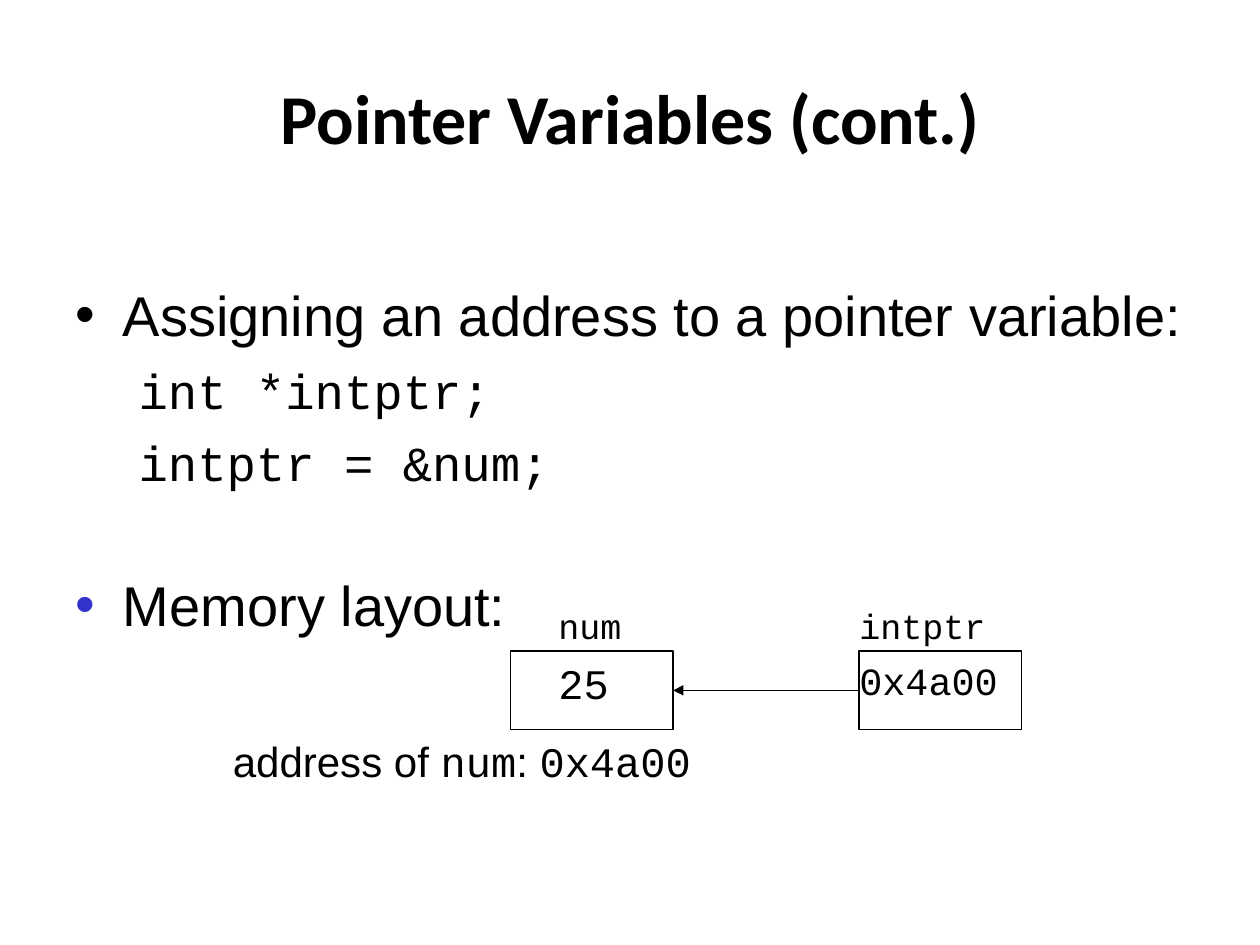
from lxml import etree
from pptx import Presentation
from pptx.dml.color import RGBColor
from pptx.enum.shapes import MSO_CONNECTOR, MSO_SHAPE
from pptx.enum.text import MSO_ANCHOR, MSO_AUTO_SIZE, PP_ALIGN
from pptx.oxml.ns import qn
from pptx.util import Pt

RECT = MSO_SHAPE.RECTANGLE
STRAIGHT = MSO_CONNECTOR.STRAIGHT
MIDDLE, TOP = MSO_ANCHOR.MIDDLE, MSO_ANCHOR.TOP
CENTER, LEFT = PP_ALIGN.CENTER, PP_ALIGN.LEFT
NO_FIT = MSO_AUTO_SIZE.NONE

COLORS = {"text": "000000", "bullet": "3333CC"}
SANS, MONO = "Arial", "Courier New"
BLACK = RGBColor.from_string(COLORS["text"])


def add_run(p, text, size, font, bold=False):
    r = p.add_run()
    r.text = text
    r.font.size = Pt(size)
    r.font.name = font
    r.font.bold = bold
    r.font.color.rgb = BLACK


def place(sp, left, top, width, height):
    sp.left, sp.top = Pt(left), Pt(top)
    sp.width, sp.height = Pt(width), Pt(height)


prs = Presentation()
prs.slide_width, prs.slide_height = Pt(720), Pt(540)
s = prs.slides.add_slide(prs.slide_layouts[1])

# Title
title = s.shapes.title
place(title, 36, 21.6, 648, 90)
tf = title.text_frame
tf.auto_size = NO_FIT
tf.vertical_anchor = MIDDLE
p = tf.paragraphs[0]
p.alignment = CENTER
add_run(p, "Pointer Variables (cont.)", 40, "Calibri", True)

# Body: text, size, font, left margin, first-line indent, space before, bullet colour
body = s.placeholders[1]
place(body, 36, 156.5, 654, 204)
tf = body.text_frame
tf.auto_size = NO_FIT
tf.vertical_anchor = TOP
lines = [
    ("Assigning an address to a pointer variable:", 32, SANS, 27, -27, 0, "text"),
    ("int *intptr;", 28, MONO, 58.5, -22.5, 7.5, None),
    ("intptr = &num;", 28, MONO, 58.5, -22.5, 7.5, None),
    ("Memory layout:", 32, SANS, 27, -27, 45, "bullet"),
]
for i, (text, size, font, margin, indent, before, bullet) in enumerate(lines):
    p = tf.paragraphs[0] if i == 0 else tf.add_paragraph()
    p.level = 0 if bullet else 1
    p.alignment = LEFT
    p.space_before = Pt(before)
    pPr = p._p.get_or_add_pPr()
    pPr.set("marL", str(Pt(margin)))
    pPr.set("indent", str(Pt(indent)))
    if bullet:
        clr = etree.SubElement(pPr, qn("a:buClr"))
        etree.SubElement(clr, qn("a:srgbClr"), val=COLORS[bullet])
        etree.SubElement(pPr, qn("a:buFont"), typeface=SANS)
        etree.SubElement(pPr, qn("a:buChar"), char="•")
    else:
        etree.SubElement(pPr, qn("a:buNone"))
    add_run(p, text, size, font)

# Memory cells
CELL_TOP, CELL_W, CELL_H = 372, 93, 45
NUM_X, PTR_X = 291.6, 490.8
for x in (NUM_X, PTR_X):
    sp = s.shapes.add_shape(RECT, Pt(x), Pt(CELL_TOP), Pt(CELL_W), Pt(CELL_H))
    sp.shadow.inherit = False
    sp.fill.background()
    sp.line.color.rgb = BLACK
    sp.line.width = Pt(0.75)

# Cell names, values and address caption
labels = [
    (312, 342, 56, 39, [("num", 20, MONO)]),
    (484, 342, 96, 39, [("intptr", 20, MONO)]),
    (312, CELL_TOP, 48, 45, [("25", 24, MONO)]),
    (484, CELL_TOP, 104, 42, [("0x4a00", 22, MONO)]),
    (126, 417, 305, 45, [("address of ", 24, SANS), ("num", 24, MONO),
                         (": ", 24, SANS), ("0x4a00", 24, MONO)]),
]
for x, y, w, h, runs in labels:
    tf = s.shapes.add_textbox(Pt(x), Pt(y), Pt(w), Pt(h)).text_frame
    tf.word_wrap = False
    for run in runs:
        add_run(tf.paragraphs[0], *run)

# Arrow from the pointer to num
mid = CELL_TOP + CELL_H / 2
arrow = s.shapes.add_connector(STRAIGHT, Pt(PTR_X), Pt(mid), Pt(NUM_X + CELL_W), Pt(mid))
arrow.line.color.rgb = BLACK
arrow.line.width = Pt(0.75)
etree.SubElement(arrow.line._get_or_add_ln(), qn("a:tailEnd"), type="triangle")
etree.SubElement(arrow._element.spPr, qn("a:effectLst"))

prs.save("out.pptx")
